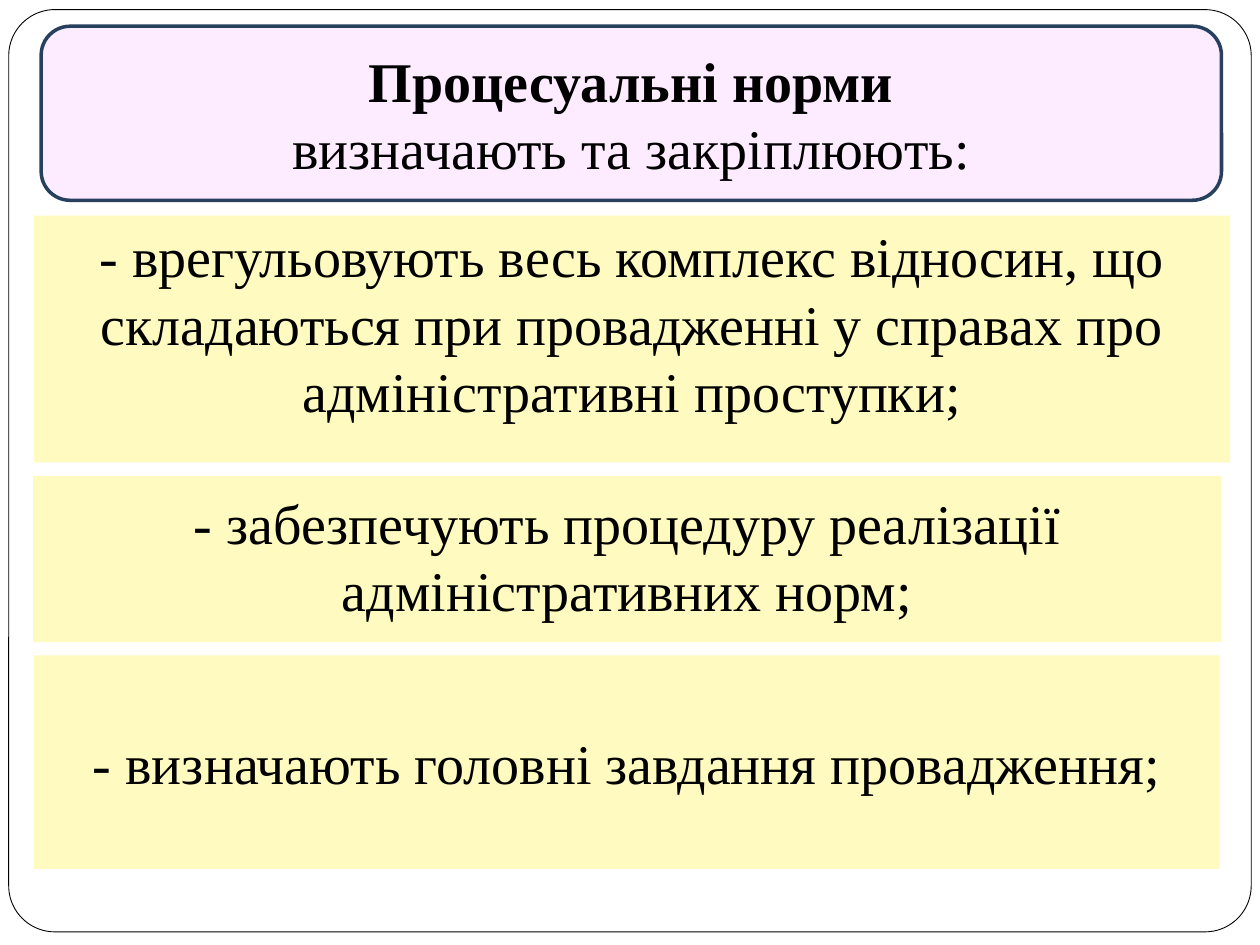
"""Build a slide listing what procedural norms define."""
from dataclasses import dataclass

from pptx import Presentation
from pptx.dml.color import RGBColor
from pptx.enum.shapes import MSO_SHAPE
from pptx.enum.text import MSO_ANCHOR, PP_ALIGN
from pptx.util import Pt

RECT, ROUND = MSO_SHAPE.RECTANGLE, MSO_SHAPE.ROUNDED_RECTANGLE
TOP, MIDDLE = MSO_ANCHOR.TOP, MSO_ANCHOR.MIDDLE
CENTER = PP_ALIGN.CENTER


@dataclass(frozen=True)
class Theme:
    font: str = "Times New Roman"
    size: float = 32
    text: str = "000000"
    paper: str = "FFFFFF"
    frame: str = "000000"
    header: str = "FDEBFF"
    header_line: str = "27405E"
    panel: str = "FFFAC0"


class SlideBuilder:
    def __init__(self, slide, theme):
        self.s, self.theme = slide, theme

    def box(self, kind, at, fill, line=None, width=0):
        sp = self.s.shapes.add_shape(kind, *map(Pt, at))
        sp.shadow.inherit = False
        sp.fill.solid()
        sp.fill.fore_color.rgb = RGBColor.from_string(fill)
        if line:
            sp.line.color.rgb = RGBColor.from_string(line)
            sp.line.width = Pt(width)
        else:
            sp.line.fill.background()
        return sp

    def label(self, sp, lines, anchor=MIDDLE, before=0, bottom=3.6):
        tf = sp.text_frame
        frame = {"word_wrap": True, "vertical_anchor": anchor,
                 "margin_left": Pt(7.2), "margin_right": Pt(7.2),
                 "margin_top": Pt(3.6), "margin_bottom": Pt(bottom)}
        for name, value in frame.items():
            setattr(tf, name, value)
        for i, (text, bold) in enumerate(lines):
            p = tf.add_paragraph() if i else tf.paragraphs[0]
            p.alignment, p.space_before = CENTER, Pt(before)
            r = p.add_run()
            r.text = text
            font = {"name": self.theme.font, "size": Pt(self.theme.size), "bold": bold}
            for name, value in font.items():
                setattr(r.font, name, value)
            r.font.color.rgb = RGBColor.from_string(self.theme.text)

    def frame(self, at):
        sp = self.box(ROUND, at, self.theme.paper, self.theme.frame, 0.5)
        sp.adjustments[0] = 0.05

    def header(self, at, lines):
        sp = self.box(ROUND, at, self.theme.header, self.theme.header_line, 2)
        self.label(sp, lines)

    def panel(self, at, text, **style):
        self.label(self.box(RECT, at, self.theme.panel), [(text, False)], **style)


def main():
    prs = Presentation()
    prs.slide_width, prs.slide_height = Pt(720), Pt(540)
    b = SlideBuilder(prs.slides.add_slide(prs.slide_layouts[6]), Theme())
    b.frame((5, 5.5, 710, 527))
    b.panel((19, 272, 679, 95),
            "- забезпечують процедуру реалізації адміністративних норм;", bottom=7.2)
    b.panel((19.5, 123.25, 683.5, 141),
            "- врегульовують весь комплекс відносин, що складаються при "
            "провадженні у справах про адміністративні проступки;",
            anchor=TOP, before=5.8)
    b.panel((19.5, 374.5, 677.5, 122),
            "- визначають головні завдання провадження;", before=5.8)
    b.header((23.5, 15, 674.5, 99.5),
             [("Процесуальні норми", True), ("визначають та закріплюють:", False)])
    prs.save("out.pptx")


if __name__ == "__main__":
    main()
